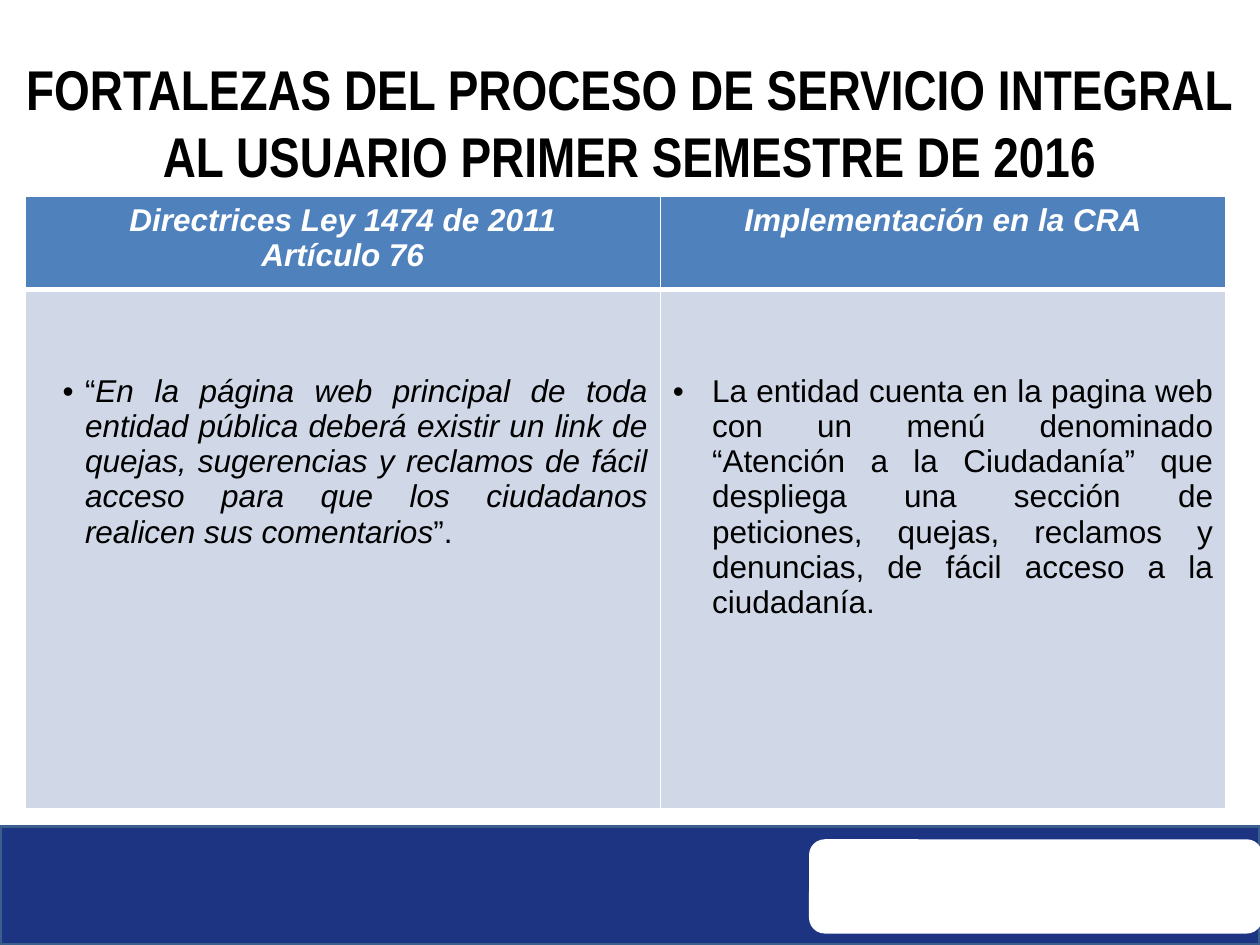
from lxml import etree
from pptx import Presentation
from pptx import util as u
from pptx.dml.color import RGBColor
from pptx.enum import shapes, text
from pptx.oxml.ns import qn

NAVY = RGBColor(0x1C, 0x34, 0x81)
EDGE = RGBColor(0x3A, 0x5F, 0x8C)
BLUE = RGBColor(0x4F, 0x81, 0xBD)
PALE = RGBColor(0xD0, 0xD8, 0xE8)
WHITE = RGBColor(0xFF, 0xFF, 0xFF)
BLACK = RGBColor(0, 0, 0)


class Deck:
    """Holds the style and the current slide."""
    font = "Arial"
    head = "Arial Narrow"
    size = 18

    def __init__(self, wide, high):
        self.prs = Presentation()
        self.prs.slide_width, self.prs.slide_height = u.Cm(wide), u.Cm(high)
        self.slide = self.prs.slides.add_slide(self.prs.slide_layouts[6])

    def block(self, kind, box, fill, line=None):
        shape = self.slide.shapes.add_shape(kind, *map(u.Cm, box))
        shape.shadow.inherit = False
        shape.fill.solid()
        shape.fill.fore_color.rgb = fill
        if line is None:
            shape.line.fill.background()
        else:
            shape.line.color.rgb = line
            shape.line.width = u.Pt(2)

    def style(self, font, color, size, name, bold=False, italic=False):
        font.name, font.size = name, u.Pt(size)
        font.bold, font.italic = bold, italic
        font.color.rgb = color

    def title(self, box, words):
        frame = self.slide.shapes.add_textbox(*map(u.Cm, box)).text_frame
        frame.word_wrap = True
        frame.text = words
        para = frame.paragraphs[0]
        para.alignment = text.PP_ALIGN.CENTER
        self.style(para.runs[0].font, BLACK, 32, self.head, bold=True)

    def table(self, left, top, cols, rows):
        grid = self.slide.shapes.add_table(
            len(rows), len(cols), u.Cm(left), u.Cm(top),
            u.Cm(sum(cols)), u.Cm(sum(rows))).table
        for col, wide in zip(grid.columns, cols):
            col.width = u.Cm(wide)
        for row, high in zip(grid.rows, rows):
            row.height = u.Cm(high)
        return grid

    def cell(self, cell, fill, thick):
        """Fill a cell and edge it in white; one side is thicker."""
        cell.fill.solid()
        cell.fill.fore_color.rgb = fill
        props = cell._tc.get_or_add_tcPr()
        for spot, side in enumerate(("lnL", "lnR", "lnT", "lnB")):
            line = etree.Element(qn("a:" + side))
            line.set("w", str(u.Pt(3 if side == thick else 1)))
            solid = etree.SubElement(line, qn("a:solidFill"))
            etree.SubElement(solid, qn("a:srgbClr")).set("val", str(WHITE))
            props.insert(spot, line)

    def header(self, cell, words):
        self.cell(cell, BLUE, "lnB")
        cell.text_frame.text = words
        for para in cell.text_frame.paragraphs:
            para.alignment = text.PP_ALIGN.CENTER
            self.style(para.runs[0].font, WHITE, self.size, self.font, True, True)

    def bullet(self, cell, parts, left, hang):
        """Write one bulleted paragraph from (words, italic) parts."""
        self.cell(cell, PALE, "lnT")
        cell.margin_top = u.Cm(1.69)
        para = cell.text_frame.paragraphs[0]
        para.alignment = text.PP_ALIGN.JUSTIFY
        props = para._p.get_or_add_pPr()
        props.set("marL", str(u.Cm(left)))
        props.set("indent", str(-u.Cm(hang)))
        etree.SubElement(props, qn("a:buFont")).set("typeface", self.font)
        etree.SubElement(props, qn("a:buChar")).set("char", "•")
        for words, italic in parts:
            run = para.add_run()
            run.text = words
            self.style(run.font, BLACK, self.size, self.font, italic=italic)


def main():
    deck = Deck(25.4, 19.05)

    # Footer band with its white panel
    kind = shapes.MSO_SHAPE
    deck.block(kind.RECTANGLE, (0, 16.66, 25.4, 2.39), NAVY, EDGE)
    deck.block(kind.ROUNDED_RECTANGLE, (16.31, 16.92, 9.14, 1.9), WHITE)

    # Title
    deck.title((0, 0.97, 25.4, 4.37),
               "FORTALEZAS DEL PROCESO DE SERVICIO INTEGRAL "
               "AL USUARIO PRIMER SEMESTRE DE 2016")

    # Law against practice
    grid = deck.table(0.51, 3.96, (12.8, 11.4), (1.88, 10.46))
    deck.header(grid.cell(0, 0), "Directrices Ley 1474 de 2011\nArtículo 76")
    deck.header(grid.cell(0, 1), "Implementación en la CRA")
    law = (("“", False),
           ("En la página web principal de toda entidad pública deberá "
            "existir un link de quejas, sugerencias y reclamos de fácil "
            "acceso para que los ciudadanos realicen sus comentarios", True),
           ("”.", False))
    deck.bullet(grid.cell(1, 0), law, 0.95, 0.45)
    work = (("La entidad cuenta en la pagina web con un menú denominado "
             "“Atención a la Ciudadanía” que despliega una sección de "
             "peticiones, quejas, reclamos y denuncias, de fácil acceso "
             "a la ciudadanía.", False),)
    deck.bullet(grid.cell(1, 1), work, 0.79, 0.79)

    deck.prs.save("out.pptx")


if __name__ == "__main__":
    main()
